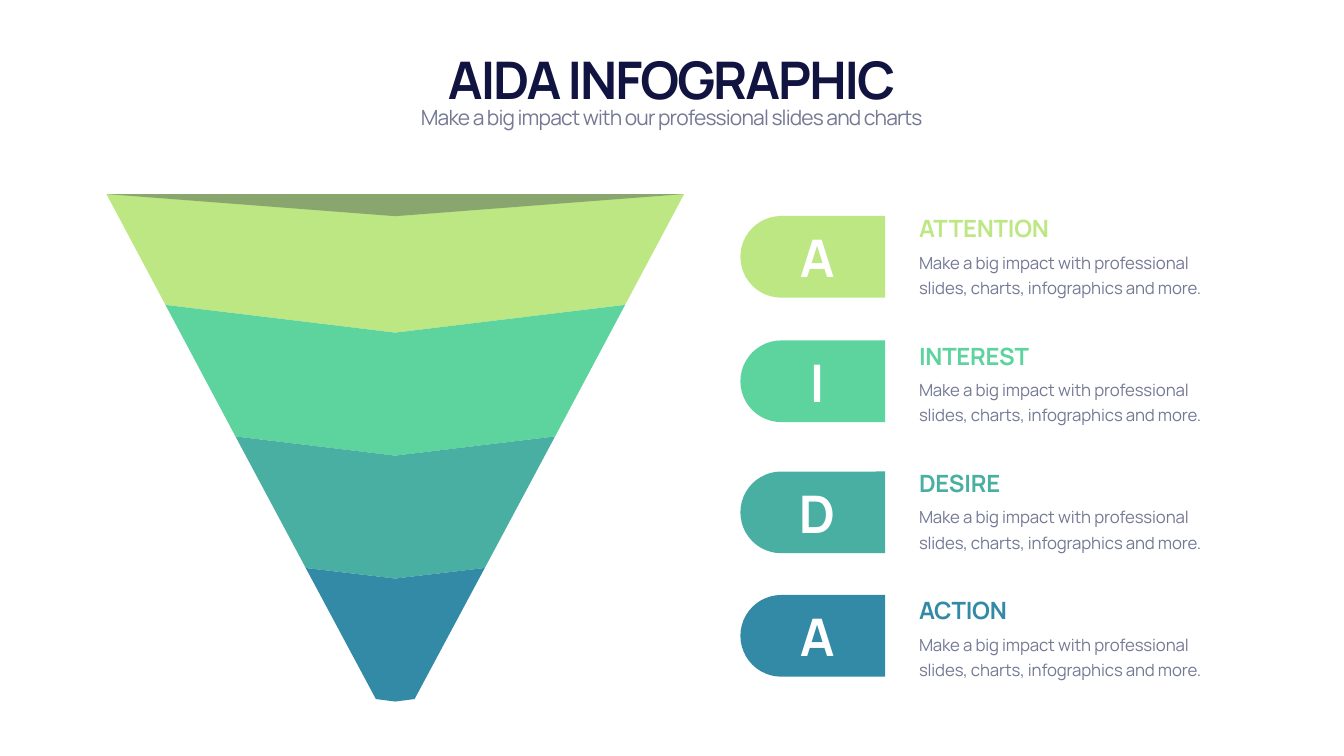
from lxml import etree
from pptx import Presentation
from pptx import util as u
from pptx.dml.color import RGBColor
from pptx.enum import shapes, text
from pptx.oxml.ns import qn

WIDTH, HEIGHT = u.Inches(26.66), u.Inches(15)
FONT = "Manrope"
COLORS = {
    "navy": "111340", "gray": "747994", "white": "FFFFFF",
    "lime": "BCE783", "green": "5DD39E", "teal": "49AFA3", "blue": "338AA7",
}
DESCRIPTION = "Make a big impact with professional slides, charts, infographics and more."

# Letter, heading, colour, height of the badge's centre
STAGES = [
    ("A", "ATTENTION", "lime", 33.97),
    ("I", "INTEREST", "green", 50.43),
    ("D", "DESIRE", "teal", 67.77),
    ("A", "ACTION", "blue", 84.1),
]
TEXT_TOP, TEXT_PITCH = 27.6, 16.84

# Half width, height at the edges, height at the axis
FUNNEL_AXIS = 29.41
FUNNEL_LEVELS = [
    (21.49, 25.67, 25.67),
    (17.1, 40.33, 44),
    (11.89, 57.73, 60.27),
    (6.66, 75.13, 76.53),
    (1.44, 92.47, 92.8),
]
FUNNEL_MOUTH = (21.49, 25.67, 28.6)

CENTER = text.PP_ALIGN.CENTER
TOP, MIDDLE, BOTTOM = (text.MSO_ANCHOR.TOP, text.MSO_ANCHOR.MIDDLE,
                       text.MSO_ANCHOR.BOTTOM)
STYLES = {
    "title": dict(size=74, bold=True, spacing=-290, align=CENTER, anchor=BOTTOM),
    "subtitle": dict(size=30, bold=False, spacing=-120, align=CENTER, anchor=TOP),
    "letter": dict(size=74, bold=True, spacing=-290, align=CENTER, anchor=MIDDLE),
    "heading": dict(size=34, bold=True, spacing=-30, anchor=BOTTOM),
    "body": dict(size=24, bold=False, spacing=-20, anchor=TOP, line=36, inset=0.05),
}


def across(percent):
    return u.Emu(round(WIDTH * percent / 100))


def down(percent):
    return u.Emu(round(HEIGHT * percent / 100))


def set_all(target, values):
    for name, value in values.items():
        setattr(target, name, value)


def paint(shape, color, alpha=None):
    """Fill without line or shadow; alpha is the opacity in percent."""
    shape.shadow.inherit = False
    shape.line.fill.background()
    shape.fill.solid()
    shape.fill.fore_color.rgb = RGBColor.from_string(COLORS[color])
    if alpha is not None:
        fill_color = shape._element.spPr.find(".//" + qn("a:srgbClr"))
        etree.SubElement(fill_color, qn("a:alpha")).set("val", str(alpha * 1000))


def add_label(slide, words, box, style, color):
    """Box is left, top, width and height in percent of the slide."""
    look = STYLES[style]
    left, top, width, height = box
    shape = slide.shapes.add_textbox(across(left), down(top),
                                     across(width), down(height))
    frame = shape.text_frame
    inset = u.Inches(look.get("inset", 0))
    set_all(frame, dict(
        word_wrap=True, auto_size=text.MSO_AUTO_SIZE.SHAPE_TO_FIT_TEXT,
        vertical_anchor=look["anchor"], margin_top=inset, margin_bottom=inset,
        margin_left=u.Inches(0.09), margin_right=u.Inches(0.09)))
    paragraph = frame.paragraphs[0]
    paragraph.alignment = look.get("align", text.PP_ALIGN.LEFT)
    if "line" in look:
        paragraph.line_spacing = u.Pt(look["line"])
    run = paragraph.add_run()
    run.text = words
    set_all(run.font, dict(name=FONT, size=u.Pt(look["size"]), bold=look["bold"]))
    run.font.color.rgb = RGBColor.from_string(COLORS[color])
    run._r.get_or_add_rPr().set("spc", str(look["spacing"]))


def level_points(level):
    half_width, edge, middle = level
    return [(across(FUNNEL_AXIS - half_width), down(edge)),
            (across(FUNNEL_AXIS), down(middle)),
            (across(FUNNEL_AXIS + half_width), down(edge))]


def add_polygon(slide, points, color, alpha=None):
    builder = slide.shapes.build_freeform(*points[0])
    builder.add_line_segments(points[1:], close=True)
    paint(builder.convert_to_shape(), color, alpha)


def add_funnel(slide):
    for upper, lower, stage in zip(FUNNEL_LEVELS, FUNNEL_LEVELS[1:], STAGES):
        points = level_points(upper) + level_points(lower)[::-1]
        add_polygon(slide, points, stage[2])
    add_polygon(slide, level_points(FUNNEL_MOUTH), "navy", alpha=30)


def add_badge(slide, letter, color, center):
    width, height = across(6.08), down(19.13)
    shape = slide.shapes.add_shape(
        shapes.MSO_SHAPE.ROUND_2_SAME_RECTANGLE, across(60.47) - width // 2,
        down(center) - height // 2, width, height)
    shape.rotation = 270
    shape.adjustments[0], shape.adjustments[1] = 0.5, 0
    paint(shape, color)
    add_label(slide, letter, (57.91, center - 4.44, 5.78, 9), "letter", "white")


def add_stage_text(slide, heading, color, top):
    add_label(slide, heading, (68.04, top, 23.93, 4.47), "heading", color)
    add_label(slide, DESCRIPTION, (68.04, top + 4.8, 23.93, 7.27), "body", "gray")


def main():
    presentation = Presentation()
    set_all(presentation, dict(slide_width=WIDTH, slide_height=HEIGHT))
    slide = presentation.slides.add_slide(presentation.slide_layouts[6])
    add_funnel(slide)
    add_label(slide, "AIDA INFOGRAPHIC", (6.22, 5.47, 87.51, 9), "title", "navy")
    add_label(slide, "Make a big impact with our professional slides and charts",
              (6.22, 13.8, 87.51, 4.07), "subtitle", "gray")
    for row, (letter, heading, color, center) in enumerate(STAGES):
        add_badge(slide, letter, color, center)
        add_stage_text(slide, heading, color, TEXT_TOP + row * TEXT_PITCH)
    presentation.save("out.pptx")


if __name__ == "__main__":
    main()
